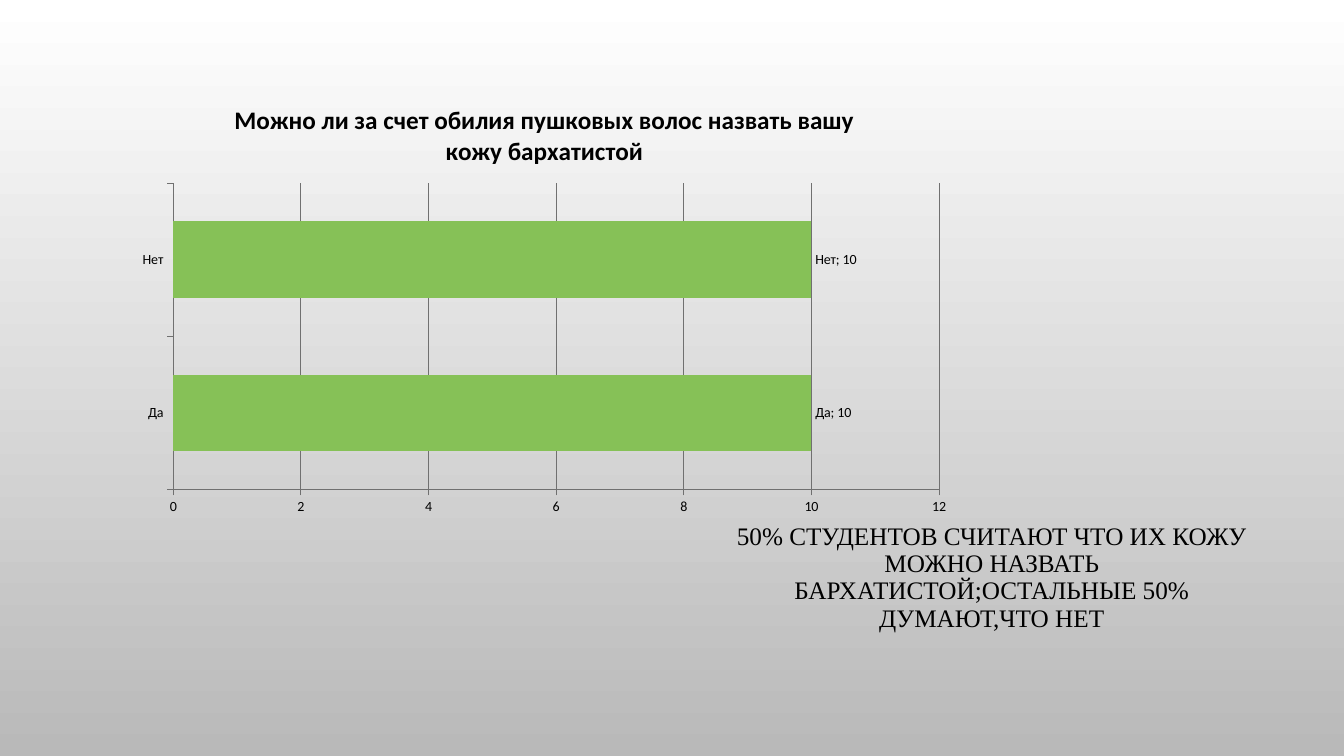
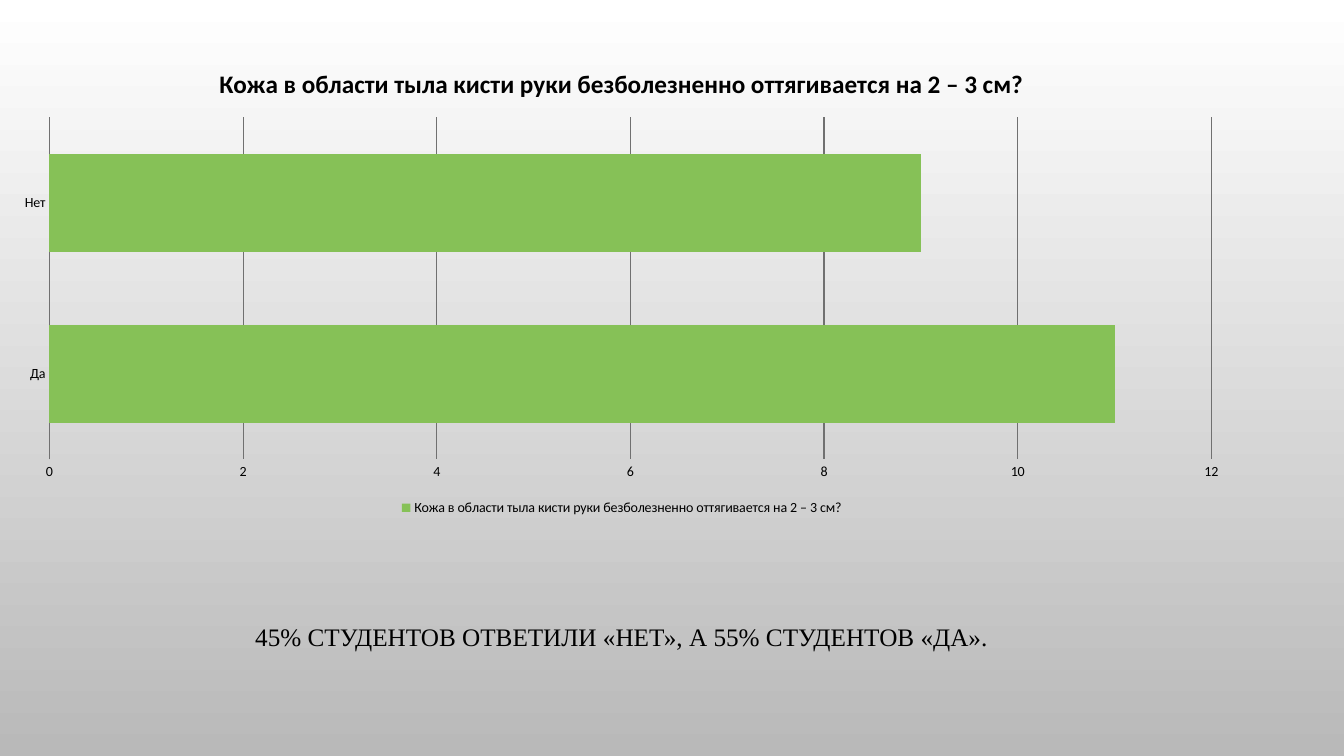
"""Two survey slides, each with a bar chart and a conclusion."""
from dataclasses import dataclass

from lxml.etree import SubElement
from pptx import Presentation
from pptx.chart.data import CategoryChartData
from pptx.dml.color import RGBColor
from pptx.enum.chart import XL_CHART_TYPE, XL_LABEL_POSITION, XL_LEGEND_POSITION, XL_TICK_MARK
from pptx.enum.text import MSO_ANCHOR, MSO_AUTO_SIZE, PP_ALIGN
from pptx.oxml import parse_xml
from pptx.oxml.ns import nsdecls, qn
from pptx.util import Emu, Pt

PX = 9525
ANSWERS = ("Да", "Нет")


@dataclass(frozen=True)
class Theme:
    top: RGBColor = RGBColor.from_string("FFFFFF")
    bottom: RGBColor = RGBColor.from_string("B9B9B9")
    ink: RGBColor = RGBColor.from_string("000000")
    rule: RGBColor = RGBColor.from_string("707070")
    bar: RGBColor = RGBColor.from_string("86C157")
    conclusion_font: str = "Times New Roman"
    chart_font: str = "Calibri"
    heading: int = 18
    label: int = 10
    rule_width: float = 0.75


def px(*lengths):
    return [Emu(length * PX) for length in lengths]


def style_font(font, name, size, color, bold=False):
    font.name, font.size, font.bold = name, Pt(size), bold
    font.color.rgb = color


def write(frame, text, align=PP_ALIGN.CENTER, spacing=None, **style):
    paragraph = frame.paragraphs[0]
    paragraph.alignment = align
    paragraph.line_spacing = spacing
    run = paragraph.add_run()
    run.text = text
    style_font(run.font, **style)


def clear_fill():
    return parse_xml(f"<c:spPr {nsdecls('c', 'a')}><a:noFill/><a:ln><a:noFill/></a:ln></c:spPr>")


class Deck:
    def __init__(self, theme):
        self.theme = theme
        self.presentation = Presentation()
        self.presentation.slide_width, self.presentation.slide_height = px(1280, 720)
        self.slide = None
        backdrop = self.presentation.slide_master.background.fill
        backdrop.gradient()
        backdrop.gradient_angle = 270
        for stop, color in zip(backdrop.gradient_stops, (theme.top, theme.bottom)):
            stop.color.rgb = color

    def add_slide(self):
        self.slide = self.presentation.slides.add_slide(self.presentation.slide_layouts[5])

    def conclusion(self, text, box):
        title = self.slide.shapes.title
        title.left, title.top, title.width, title.height = px(*box)
        frame = title.text_frame
        frame.word_wrap = True
        frame.auto_size = MSO_AUTO_SIZE.NONE
        frame.vertical_anchor = MSO_ANCHOR.MIDDLE
        write(frame, text, spacing=0.9, name=self.theme.conclusion_font,
              size=self.theme.heading, color=self.theme.ink)

    def rule(self, line):
        line.color.rgb = self.theme.rule
        line.width = Pt(self.theme.rule_width)

    def bar_chart(self, question, votes, box, gap, overlap=0, ticks=False, labels=False, legend=False):
        theme = self.theme
        small = dict(name=theme.chart_font, size=theme.label, color=theme.ink)
        survey = CategoryChartData()
        survey.categories = ANSWERS
        survey.add_series(question, votes)
        chart = self.slide.shapes.add_chart(XL_CHART_TYPE.BAR_CLUSTERED, *px(*box), survey).chart
        style_font(chart.font, **small)
        chart.has_title = True
        write(chart.chart_title.text_frame, question, name=theme.chart_font,
              size=theme.heading, color=theme.ink, bold=True)
        chart.chart_title.include_in_layout = False

        plot = chart.plots[0]
        plot.gap_width, plot.overlap, plot.vary_by_categories = gap, overlap, False
        bars = plot.series[0].format.fill
        bars.solid()
        bars.fore_color.rgb = theme.bar

        for axis in (chart.category_axis, chart.value_axis):
            axis.major_tick_mark = XL_TICK_MARK.OUTSIDE if ticks else XL_TICK_MARK.NONE
            axis.minor_tick_mark = XL_TICK_MARK.NONE
            style_font(axis.tick_labels.font, **small)
            self.rule(axis.format.line)
        scale = chart.value_axis
        scale.minimum_scale, scale.maximum_scale, scale.major_unit = 0, 12, 2
        scale.has_major_gridlines = True
        self.rule(scale.major_gridlines.format.line)
        if not ticks:
            scale.format.line.fill.background()

        if labels:
            self.bar_labels(plot.series[0].data_labels, small)
        chart.has_legend = legend
        if legend:
            chart.legend.position = XL_LEGEND_POSITION.BOTTOM
            chart.legend.include_in_layout = False
            style_font(chart.legend.font, **small)

        body = chart.element.find(qn("c:chart"))
        body.addnext(clear_fill())
        body.find(qn("c:plotArea")).append(clear_fill())

    def bar_labels(self, labels, style):
        labels.show_value = labels.show_category_name = True
        labels.position = XL_LABEL_POSITION.OUTSIDE_END
        style_font(labels.font, **style)
        element = labels._element
        separator = SubElement(element, qn("c:separator"))
        separator.text = "; "
        element.find(qn("c:showBubbleSize")).addnext(separator)


def main():
    deck = Deck(Theme())
    deck.add_slide()
    deck.conclusion("50% СТУДЕНТОВ СЧИТАЮТ ЧТО ИХ КОЖУ МОЖНО НАЗВАТЬ "
                    "БАРХАТИСТОЙ;ОСТАЛЬНЫЕ 50% ДУМАЮТ,ЧТО НЕТ", (685, 381, 519, 339))
    deck.bar_chart("Можно ли за счет обилия пушковых волос назвать вашу кожу бархатистой",
                   (10, 10), (120, 80, 797, 419), gap=100, ticks=True, labels=True)
    deck.add_slide()
    deck.conclusion("45% СТУДЕНТОВ ОТВЕТИЛИ «НЕТ», А 55% СТУДЕНТОВ «ДА».", (0, 495, 1184, 225))
    deck.bar_chart("Кожа в области тыла кисти руки безболезненно оттягивается на 2 – 3 см?",
                   (11, 9), (0, 45, 1184, 450), gap=75, overlap=-25, legend=True)
    deck.presentation.save("out.pptx")


if __name__ == "__main__":
    main()
